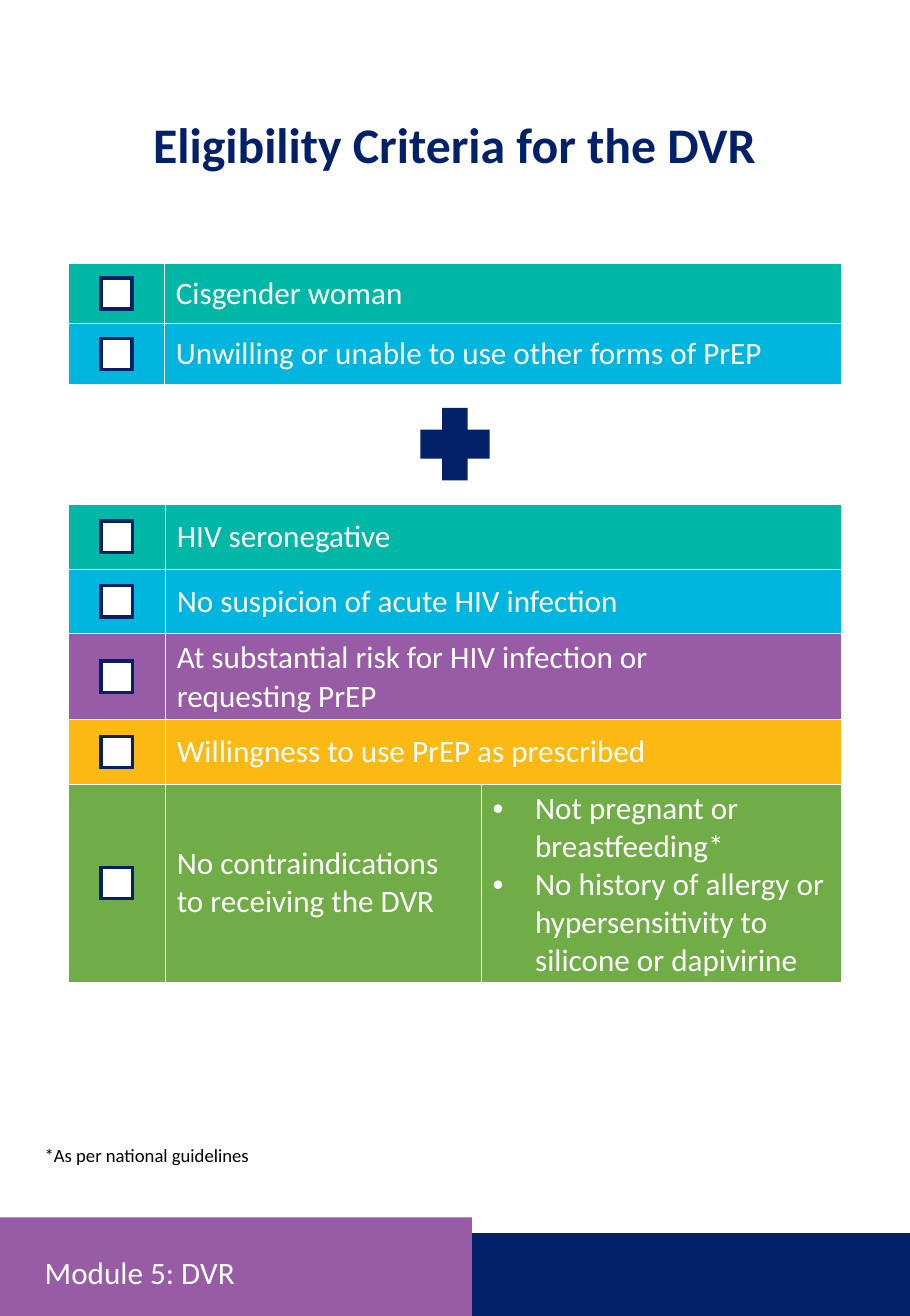
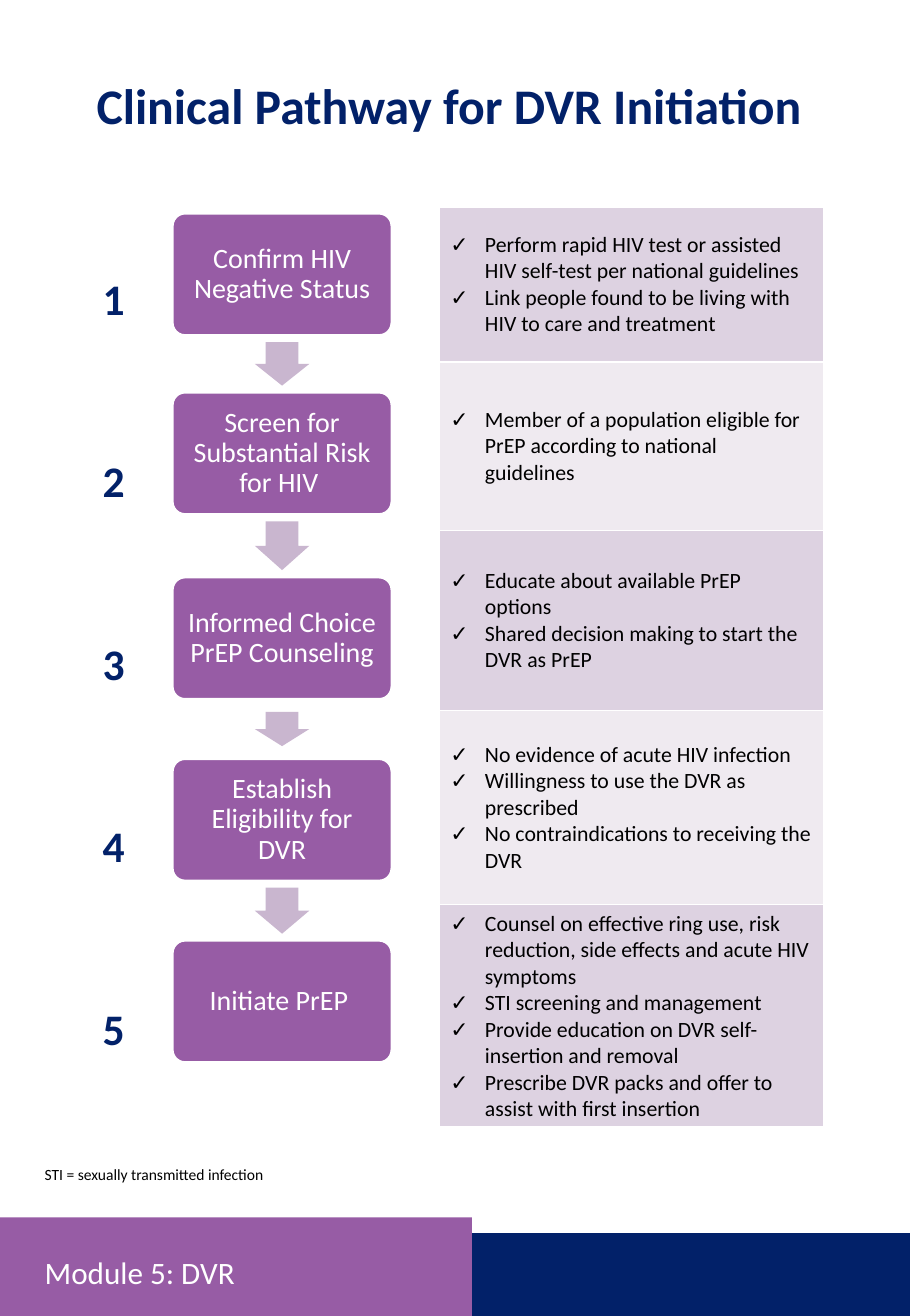
from lxml import etree
from pptx import Presentation
from pptx import util as u
from pptx.dml.color import RGBColor
from pptx.enum import shapes, text
from pptx.oxml.ns import qn

NAVY = RGBColor(0x02, 0x21, 0x69)
PURPLE = RGBColor(0x97, 0x5C, 0xA5)
LILAC = RGBColor(0xC9, 0xB6, 0xCF)
MAUVE = RGBColor(0xDD, 0xD2, 0xE1)
PALE = RGBColor(0xEF, 0xEA, 0xF0)
TEAL = RGBColor(0x00, 0xB8, 0xA5)
BLUE = RGBColor(0x00, 0xB5, 0xDE)
GOLD = RGBColor(0xFD, 0xB9, 0x13)
GREEN = RGBColor(0x70, 0xAD, 0x47)
WHITE = RGBColor(0xFF, 0xFF, 0xFF)
BLACK = RGBColor(0, 0, 0)
FONT = "Calibri"
HARD = chr(160)
KIND = shapes.MSO_SHAPE
MID = text.MSO_ANCHOR.MIDDLE
TOP = text.MSO_ANCHOR.TOP
CENTER = text.PP_ALIGN.CENTER

deck = Presentation()
deck.slide_width = u.Pt(585)
deck.slide_height = u.Pt(846)
COL = deck.slide_width / 100
ROW = deck.slide_height / 100


def put(slide, kind, x, y, w, h, fill=None, line=None, thick=1):
    area = [round(n) for n in (x * COL, y * ROW, w * COL, h * ROW)]
    if kind is None:
        box = slide.shapes.add_textbox(*area)
        box.text_frame.word_wrap = True
        return box
    box = slide.shapes.add_shape(kind, *area)
    box.shadow.inherit = False
    box.fill.solid()
    box.fill.fore_color.rgb = fill
    if line is None:
        box.line.fill.background()
    else:
        box.line.color.rgb = line
        box.line.width = u.Pt(thick)
        edge = box._element.spPr.find(qn("a:ln"))
        etree.SubElement(edge, qn("a:miter")).set("lim", "800000")
    return box


def write(frame, words, size, ink, bold=False, align=None, lead=None, mark=None, dent=0):
    listed = isinstance(words, list)
    frame.text = "\n".join(words) if listed else words
    for para in frame.paragraphs:
        para.alignment = align
        para.line_spacing = lead
        if listed:
            props = para._p.get_or_add_pPr()
            props.set("marL", str(u.Inches(dent)))
            props.set("indent", str(-u.Inches(dent)))
            etree.SubElement(props, qn("a:buFont")).set("typeface", "Arial")
            etree.SubElement(props, qn("a:buChar")).set("char", mark)
        for run in para.runs:
            run.font.name = FONT
            run.font.size = u.Pt(size)
            run.font.bold = bold
            run.font.color.rgb = ink


pages = [
    ("Eligibility Criteria for the DVR", 8.7, "*As per national guidelines", 86.5, 12),
    ("Clinical Pathway for DVR Initiation ", 5.8, "STI = sexually transmitted infection", 88.1, 10),
]
slides = []
for title, top, note, base, size in pages:
    slide = deck.slides.add_slide(deck.slide_layouts[6])
    slides.append(slide)
    put(slide, KIND.RECTANGLE, 51.85, 93.7, 48.15, 6.3, NAVY)
    put(slide, KIND.RECTANGLE, 0, 92.5, 51.85, 7.5, PURPLE)
    head = put(slide, None, 7.5, top, 85, 6.9)
    write(head.text_frame, title, 32, NAVY, True, CENTER, 0.9)
    foot = put(slide, None, 3.7, 94.7, 44.2, 4.25)
    foot.text_frame.vertical_anchor = MID
    write(foot.text_frame, "Module 5: DVR", 20, WHITE, lead=0.9)
    write(put(slide, None, 3.7, base, 85, 2.5).text_frame, note, size, BLACK)
first, second = slides

plus = put(first, KIND.CROSS, 46.2, 31, 7.6, 5.5, NAVY)
plus.adjustments[0] = 0.315

steps = [
    (16.25, "Confirm HIV Negative Status"),
    (29.85, "Screen for Substantial Risk for HIV "),
    (43.9, "Informed Choice PrEP Counseling"),
    (57.7, "Establish Eligibility for DVR"),
    (71.5, "Initiate PrEP "),
]
LEFT, WIDE, TALL = 19, 24, 9.2
for top, step in steps:
    card = put(second, KIND.ROUNDED_RECTANGLE, LEFT, top, WIDE, TALL, PURPLE, WHITE)
    card.adjustments[0] = 0.1
    frame = card.text_frame
    frame.word_wrap = True
    frame.vertical_anchor = MID
    frame.margin_left = frame.margin_right = u.Inches(0.09)
    frame.margin_top = frame.margin_bottom = u.Inches(0.07)
    write(frame, step, 18, WHITE, align=CENTER, lead=0.9)
for i, size in enumerate([3.3, 3.7, 2.6, 3.5]):
    mid = (steps[i][0] + TALL + steps[i + 1][0]) / 2
    arrow = put(second, KIND.DOWN_ARROW, LEFT + WIDE / 2 - 3, mid - size / 2, 6, size, LILAC)
    arrow.adjustments[0] = 0.6
    arrow.adjustments[1] = 0.5

check = dict(size=20, ink=WHITE, mark="•", dent=0.38)
count = dict(size=28, ink=NAVY, bold=True, align=CENTER, lead=2.5)
tasks = dict(size=14, ink=BLACK, mark="✓", dent=0.31)
tables = [
    (first, 7.5, 38.35, [10.7, 34.7, 39.6], [4.9, 4.9, 6.55, 4.9, 15], check, MID, [
        (TEAL, "", "HIV seronegative"),
        (BLUE, "", "No suspicion of acute HIV infection"),
        (PURPLE, "", f"At substantial risk for HIV infection or requesting{HARD}PrEP"),
        (GOLD, "", "Willingness to use PrEP as prescribed"),
        (GREEN, "", "No contraindications to receiving the DVR", [
            "Not pregnant or breastfeeding*",
            "No history of allergy or hypersensitivity to silicone or dapivirine"]),
    ]),
    (first, 7.5, 20, [10.6, 74.4], [4.6, 4.6], check, MID, [
        (TEAL, "", "Cisgender woman"),
        (BLUE, "", "Unwilling or unable to use other forms of PrEP"),
    ]),
    (second, 9.5, 14.3, [6], [13.88] * 5, count, TOP,
     [(None, str(i + 1)) for i in range(5)]),
    (second, 48.25, 15.75, [42.25], [11.75, 12.8, 13.7, 14.75, 16.9], tasks, MID, [
        (MAUVE, ["Perform rapid HIV test or assisted HIV self-test per national guidelines",
                 "Link people found to be living with HIV to care and treatment"]),
        (PALE, ["Member of a population eligible for PrEP according to national guidelines"]),
        (MAUVE, ["Educate about available PrEP options",
                 "Shared decision making to start the DVR as PrEP"]),
        (PALE, ["No evidence of acute HIV infection",
                "Willingness to use the DVR as prescribed",
                "No contraindications to receiving the DVR"]),
        (MAUVE, ["Counsel on effective ring use, risk reduction, side effects and acute HIV symptoms",
                 "STI screening and management",
                 "Provide education on DVR self-insertion and removal",
                 "Prescribe DVR packs and offer to assist with first insertion"]),
    ]),
]
SIDE = u.Inches(0.28) / COL
RISE = u.Inches(0.28) / ROW
for slide, x, y, cols, rows, style, anchor, body in tables:
    area = [round(n) for n in (x * COL, y * ROW, sum(cols) * COL, sum(rows) * ROW)]
    table = slide.shapes.add_table(len(rows), len(cols), *area).table
    table.first_row = False
    table.horz_banding = False
    for j, wide in enumerate(cols):
        table.columns[j].width = round(wide * COL)
    for i, (fill, *words) in enumerate(body):
        table.rows[i].height = round(rows[i] * ROW)
        for cell in table.rows[i].cells:
            if fill is None:
                cell.fill.background()
            else:
                cell.fill.solid()
                cell.fill.fore_color.rgb = fill
            cell.vertical_anchor = anchor
        if len(words) < len(cols):
            table.cell(i, len(words) - 1).merge(table.cell(i, len(cols) - 1))
        for j, word in enumerate(words):
            if word:
                write(table.cell(i, j).text_frame, word, **style)
            else:
                mid = y + sum(rows[:i]) + rows[i] / 2
                put(slide, KIND.RECTANGLE, x + (cols[0] - SIDE) / 2, mid - RISE / 2,
                    SIDE, RISE, WHITE, NAVY, 2.25)

deck.save("out.pptx")
